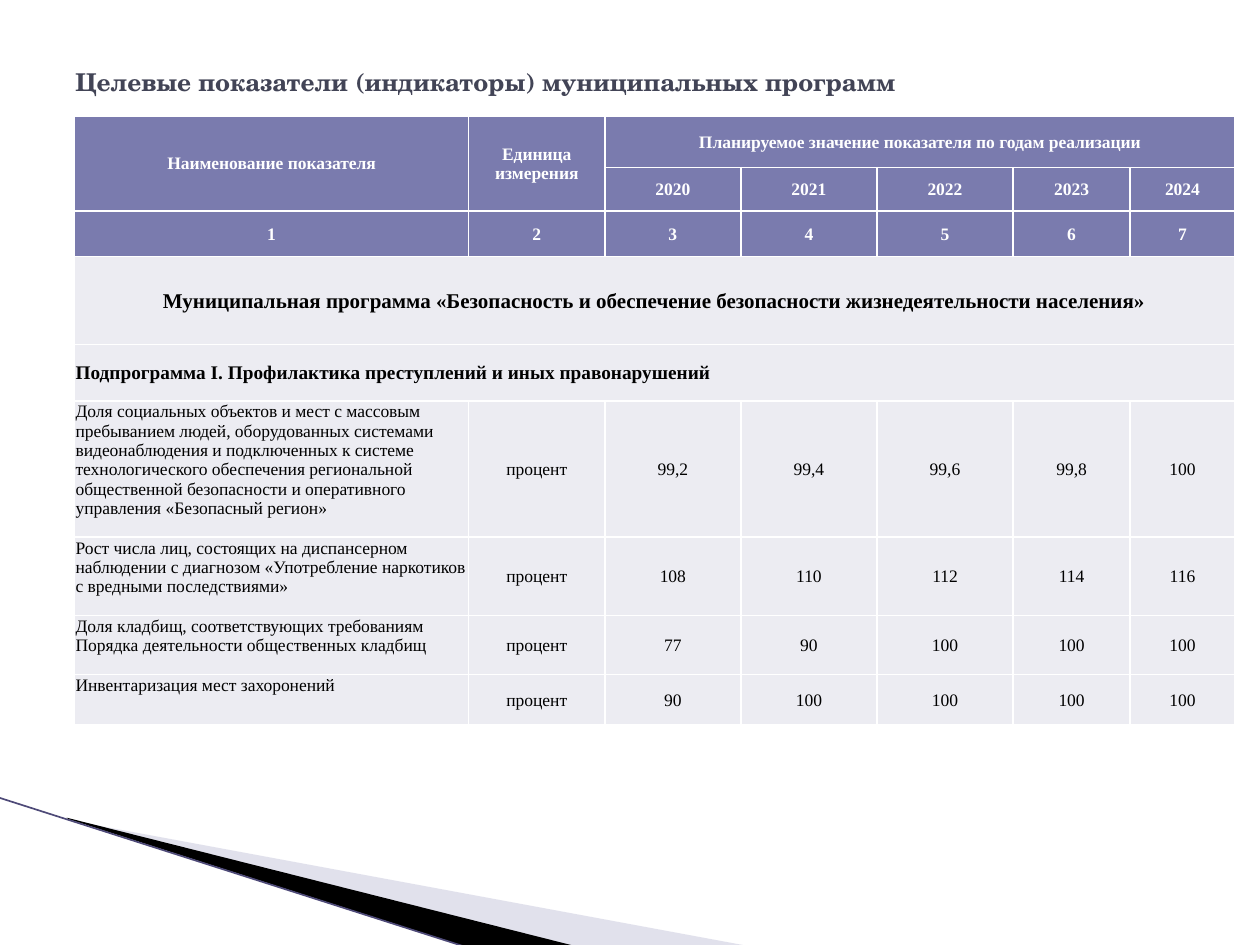
from lxml import etree
from pptx import Presentation
from pptx.dml.color import RGBColor
from pptx.enum.shapes import MSO_CONNECTOR
from pptx.enum.text import MSO_ANCHOR, PP_ALIGN
from pptx.oxml import parse_xml
from pptx.oxml.ns import qn
from pptx.util import Inches, Pt

LEFT, CENTER = PP_ALIGN.LEFT, PP_ALIGN.CENTER
TOP, MIDDLE = MSO_ANCHOR.TOP, MSO_ANCHOR.MIDDLE
STRAIGHT = MSO_CONNECTOR.STRAIGHT
WHITE = RGBColor(0xFF, 0xFF, 0xFF)
BLACK = RGBColor(0, 0, 0)
HEAD = RGBColor(0x7A, 0x7B, 0xAE)
BODY = RGBColor(0xEC, 0xEC, 0xF2)
TITLE = RGBColor(0x42, 0x44, 0x56)
PALE = RGBColor(0xB6, 0xB6, 0xD1)
EDGE = RGBColor(0x4E, 0x4A, 0x78)
SERIF = "Times New Roman"
DRAW_NS = "http://schemas.openxmlformats.org/drawingml/2006/main"

COLS = [3.13, 1.08, 1.08, 1.08, 1.08, 0.93, 0.83]
ROWS = [0.41, 0.32, 0.36, 0.7, 0.45, 1.08, 0.62, 0.47, 0.4]
HEADS = [
    ["Наименование показателя", "Единица измерения",
     "Планируемое значение показателя по годам реализации", "", "", "", ""],
    ["", "", "2020", "2021", "2022", "2023", "2024"],
    ["1", "2", "3", "4", "5", "6", "7"],
]
PROGRAM = ("Муниципальная программа «Безопасность и обеспечение "
           "безопасности жизнедеятельности населения»")
SUBPROGRAM = "Подпрограмма I. Профилактика преступлений и иных правонарушений"
GOALS = [
    ["Доля социальных объектов и мест с массовым пребыванием людей, "
     "оборудованных системами видеонаблюдения и подключенных к системе "
     "технологического обеспечения региональной общественной безопасности "
     "и оперативного управления «Безопасный регион»",
     "процент", "99,2", "99,4", "99,6", "99,8", "100"],
    ["Рост числа лиц, состоящих на диспансерном наблюдении с диагнозом "
     "«Употребление наркотиков с вредными последствиями»",
     "процент", "108", "110", "112", "114", "116"],
    ["Доля кладбищ, соответствующих требованиям Порядка деятельности "
     "общественных кладбищ",
     "процент", "77", "90", "100", "100", "100"],
    ["Инвентаризация мест захоронений",
     "процент", "90", "100", "100", "100", "100"],
]
SPANS = [(0, 0, 1, 0), (0, 1, 1, 1), (0, 2, 0, 6), (3, 0, 3, 6), (4, 0, 4, 6)]


def add_wedge(slide, points, color, alpha=None):
    start, *rest = [(Inches(x), Inches(y)) for x, y in points]
    pen = slide.shapes.build_freeform(*start)
    pen.add_line_segments(rest)
    wedge = pen.convert_to_shape()
    wedge.shadow.inherit = False
    wedge.line.fill.background()
    wedge.fill.solid()
    wedge.fill.fore_color.rgb = color
    if alpha:
        tint = wedge.fill._xPr.find(".//" + qn("a:srgbClr"))
        etree.SubElement(tint, qn("a:alpha"), val=str(alpha * 1000))


def add_corner(slide, left, top):
    """Draw the slanted wedges and edge line from the left margin down."""
    def place(*points):
        return [(left + x, top + y) for x, y in points]

    add_wedge(slide, place((0.55, 0.18), (5.95, 1.18), (4.56, 1.18),
                           (0.55, 0.17)), PALE, 40)
    add_wedge(slide, place((0.53, 0.16), (4.57, 1.18), (3.72, 1.19),
                           (0.54, 0.17)), BLACK)
    (x1, y1), (x2, y2) = place((-0.01, 0), (3.71, 1.19))
    edge = slide.shapes.add_connector(
        STRAIGHT, Inches(x1), Inches(y1), Inches(x2), Inches(y2))
    edge.line.color.rgb = EDGE
    edge.line.width = Pt(0.95)
    etree.SubElement(edge._element.spPr, qn("a:effectLst"))


def add_title(slide, left, top, width, height):
    box = slide.shapes.add_textbox(
        Inches(left), Inches(top), Inches(width), Inches(height))
    frame = box.text_frame
    frame.word_wrap = True
    frame.vertical_anchor = MIDDLE
    para = frame.paragraphs[0]
    para.text = "Целевые показатели (индикаторы) муниципальных программ"
    font = para.font
    font.name, font.size, font.bold = "TeX Gyre Schola", Pt(14), True
    font.color.rgb = TITLE


def add_borders(cell):
    props = cell._tc.get_or_add_tcPr()
    for side in "LRTB":
        props.append(parse_xml(
            f'<a:ln{side} xmlns:a="{DRAW_NS}" w="{Pt(1)}"><a:solidFill>'
            f'<a:srgbClr val="{WHITE}"/></a:solidFill></a:ln{side}>'))


def style_cell(cell, text, fill, color, size=10, bold=False,
               align=CENTER, anchor=MIDDLE):
    add_borders(cell)
    cell.fill.solid()
    cell.fill.fore_color.rgb = fill
    cell.margin_left = cell.margin_right = cell.margin_top = Inches(0.01)
    cell.margin_bottom = 0
    cell.vertical_anchor = anchor
    para = cell.text_frame.paragraphs[0]
    para.text = text
    para.alignment = align
    font = para.font
    font.name, font.size, font.bold = SERIF, Pt(size), bold
    font.color.rgb = color


def add_goals(slide, left, top):
    """Add the table of targets by year."""
    table = slide.shapes.add_table(
        len(ROWS), len(COLS), Inches(left), Inches(top),
        Inches(sum(COLS)), Inches(sum(ROWS))).table
    for col, width in zip(table.columns, COLS):
        col.width = Inches(width)
    for row, height in zip(table.rows, ROWS):
        row.height = Inches(height)
    for r1, c1, r2, c2 in SPANS:
        table.cell(r1, c1).merge(table.cell(r2, c2))

    blank = [""] * (len(COLS) - 1)
    lines = HEADS + [[PROGRAM] + blank, [SUBPROGRAM] + blank] + GOALS
    head = dict(fill=HEAD, color=WHITE, bold=True)
    body = dict(fill=BODY, color=BLACK)
    styles = [head] * len(HEADS) + [
        dict(body, size=12, bold=True),
        dict(body, size=11, bold=True, align=LEFT),
    ] + [body] * len(GOALS)
    first = len(lines) - len(GOALS)
    for r, (line, style) in enumerate(zip(lines, styles)):
        for c, text in enumerate(line):
            if r >= first and c == 0:
                style_cell(table.cell(r, c), text, align=LEFT, anchor=TOP,
                           **style)
            else:
                style_cell(table.cell(r, c), text, **style)


def main():
    deck = Presentation()
    deck.slide_width, deck.slide_height = Inches(10), Inches(7.5)
    slide = deck.slides.add_slide(deck.slide_layouts[6])
    add_corner(slide, 0, 6.33)
    add_title(slide, 0.5, 0.3, 9, 0.69)
    add_goals(slide, 0.59, 0.92)
    deck.save("out.pptx")


if __name__ == "__main__":
    main()
